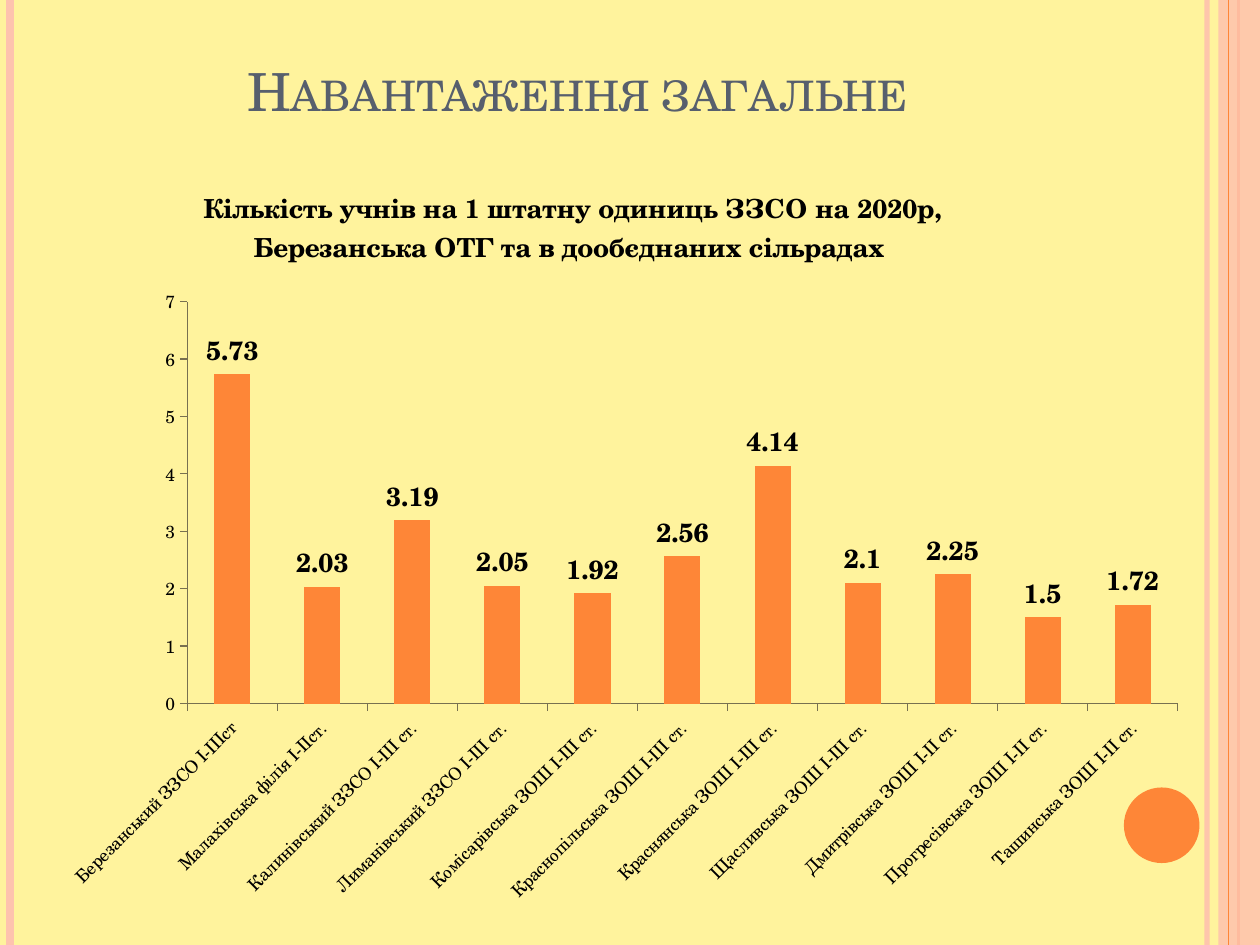
"""Build a slide with a column chart of pupils per staff unit by school."""
from lxml.etree import SubElement
from pptx import Presentation
from pptx.chart.data import CategoryChartData
from pptx.dml.color import RGBColor
from pptx.enum.chart import XL_CHART_TYPE, XL_LABEL_POSITION, XL_TICK_MARK
from pptx.enum.shapes import MSO_CONNECTOR, MSO_SHAPE
from pptx.enum.text import MSO_ANCHOR, PP_ALIGN
from pptx.oxml import parse_xml
from pptx.oxml.ns import nsdecls, qn
from pptx.util import Inches, Pt

FONT = "TeX Gyre Schola"
ORANGE, PINK = "FE8637", "FEC3AE"
CHART_TITLE = "Кількість учнів на 1 штатну одиниць ЗЗСО на 2020р, Березанська ОТГ та в дообєднаних сільрадах "
SCHOOLS = {
    "Березанський ЗЗСО І-ІІІст": 5.73,
    "Малахівська філія І-ІІст.": 2.03,
    "Калинівський ЗЗСО І-ІІІ ст.": 3.19,
    "Лиманівський ЗЗСО І-ІІІ ст.": 2.05,
    "Комісарівська ЗОШ І-ІІІ ст.": 1.92,
    "Краснопільська ЗОШ І-ІІІ ст.": 2.56,
    "Краснянська ЗОШ І-ІІІ ст.": 4.14,
    "Щасливська ЗОШ І-ІІІ ст.": 2.1,
    "Дмитрівська ЗОШ І-ІІ ст.": 2.25,
    "Прогресівська ЗОШ І-ІІ ст.": 1.5,
    "Ташинська ЗОШ І-ІІ ст.": 1.72,
}


def paint(color_format, color, alpha=100):
    color_format.solid()
    color_format.fore_color.rgb = RGBColor.from_string(color)
    if alpha < 100:
        clr = color_format._xPr.find(".//" + qn("a:srgbClr"))
        SubElement(clr, qn("a:alpha")).set("val", str(alpha * 1000))


def layout(x, y, w=None, h=None):
    size = f'<c:w val="{w}"/><c:h val="{h}"/>' if w else ""
    target = '<c:layoutTarget val="inner"/>' if w else ""
    return parse_xml(
        f'<c:layout {nsdecls("c")}><c:manualLayout>{target}<c:xMode val="edge"/><c:yMode val="edge"/>'
        f'<c:x val="{x}"/><c:y val="{y}"/>{size}</c:manualLayout></c:layout>')


prs = Presentation()
prs.slide_width, prs.slide_height = Inches(10), Inches(7.5)
W, H = prs.slide_width, prs.slide_height
s = prs.slides.add_slide(prs.slide_layouts[6])
paint(s.background.fill, "FFF39D")

stripes = [(0.958, PINK, 3, 93), (0.008, PINK, 4.5, 100),
           (0.983, ORANGE, 1.5, 100), (0.975, ORANGE, 0.75, 100)]
for i, (x, color, width, alpha) in enumerate(stripes):
    if i == 3:
        sp = s.shapes.add_shape(MSO_SHAPE.RECTANGLE, int(W * 0.967), 0, int(W * 0.033), H)
        sp.shadow.inherit = False
        sp.line.fill.background()
        paint(sp.fill, PINK, 87)
    line = s.shapes.add_connector(MSO_CONNECTOR.STRAIGHT, int(W * x), 0, int(W * x), H)
    line.line.width = Pt(width)
    paint(line.line.fill, color, alpha)
    SubElement(line._element.spPr, qn("a:effectLst"))

sp = s.shapes.add_shape(MSO_SHAPE.OVAL, Inches(8.92), Inches(6.25), Inches(0.6), Inches(0.6))
sp.shadow.inherit = False
sp.line.fill.background()
paint(sp.fill, ORANGE)

tf = s.shapes.add_textbox(Inches(0.5), Inches(0.3), Inches(8.17), Inches(0.72)).text_frame
tf.word_wrap = True
tf.vertical_anchor = MSO_ANCHOR.BOTTOM
p = tf.paragraphs[0]
p.alignment = PP_ALIGN.CENTER
r = p.add_run()
r.text = "Навантаження загальне"
r.font.size, r.font.name = Pt(30), FONT
paint(r.font.fill, "575F6D")
r.font._element.set("cap", "small")

data = CategoryChartData()
data.categories = list(SCHOOLS)
data.add_series(CHART_TITLE, list(SCHOOLS.values()))
chart = s.shapes.add_chart(XL_CHART_TYPE.COLUMN_CLUSTERED, Inches(0.39), Inches(1.25),
                           Inches(9.14), Inches(6.02), data).chart
chart.font.name, chart.font.size = FONT, Pt(10)
paint(chart.font.fill, "000000")
chart.has_legend = False

tf = chart.chart_title.text_frame
p = tf.paragraphs[0]
p.alignment = PP_ALIGN.CENTER
r = p.add_run()
r.text = CHART_TITLE
r.font.name, r.font.size, r.font.bold = FONT, Pt(15), True
paint(r.font.fill, "000000")
chart.chart_title.include_in_layout = False
title = chart.chart_title._element
for old in title.findall(qn("c:layout")):
    title.remove(old)
title.find(qn("c:tx")).addnext(layout(0.13, 0.03))

area = chart._chartSpace.chart.plotArea
for old in area.findall(qn("c:layout")):
    area.remove(old)
area.insert(0, layout(0.12, 0.19, 0.86, 0.53))

for axis in (chart.category_axis, chart.value_axis):
    axis.has_major_gridlines = False
    axis.major_tick_mark = XL_TICK_MARK.OUTSIDE
    axis.minor_tick_mark = XL_TICK_MARK.NONE
    axis.tick_labels.font.size = Pt(10)
    axis.format.line.width = Pt(0.75)
    paint(axis.format.line.fill, "787050")
chart.category_axis._element.find(qn("c:txPr")).find(qn("a:bodyPr")).set("rot", "-2700000")
chart.value_axis.minimum_scale, chart.value_axis.maximum_scale = 0, 7
chart.value_axis.major_unit = 1

plot = chart.plots[0]
plot.gap_width = 150
plot.vary_by_categories = False
paint(plot.series[0].format.fill, ORANGE)
labels = plot.series[0].data_labels
labels.show_value = True
labels.position = XL_LABEL_POSITION.OUTSIDE_END
labels.font.name, labels.font.size, labels.font.bold = FONT, Pt(15), True
paint(labels.font.fill, "000000")

prs.save("out.pptx")
